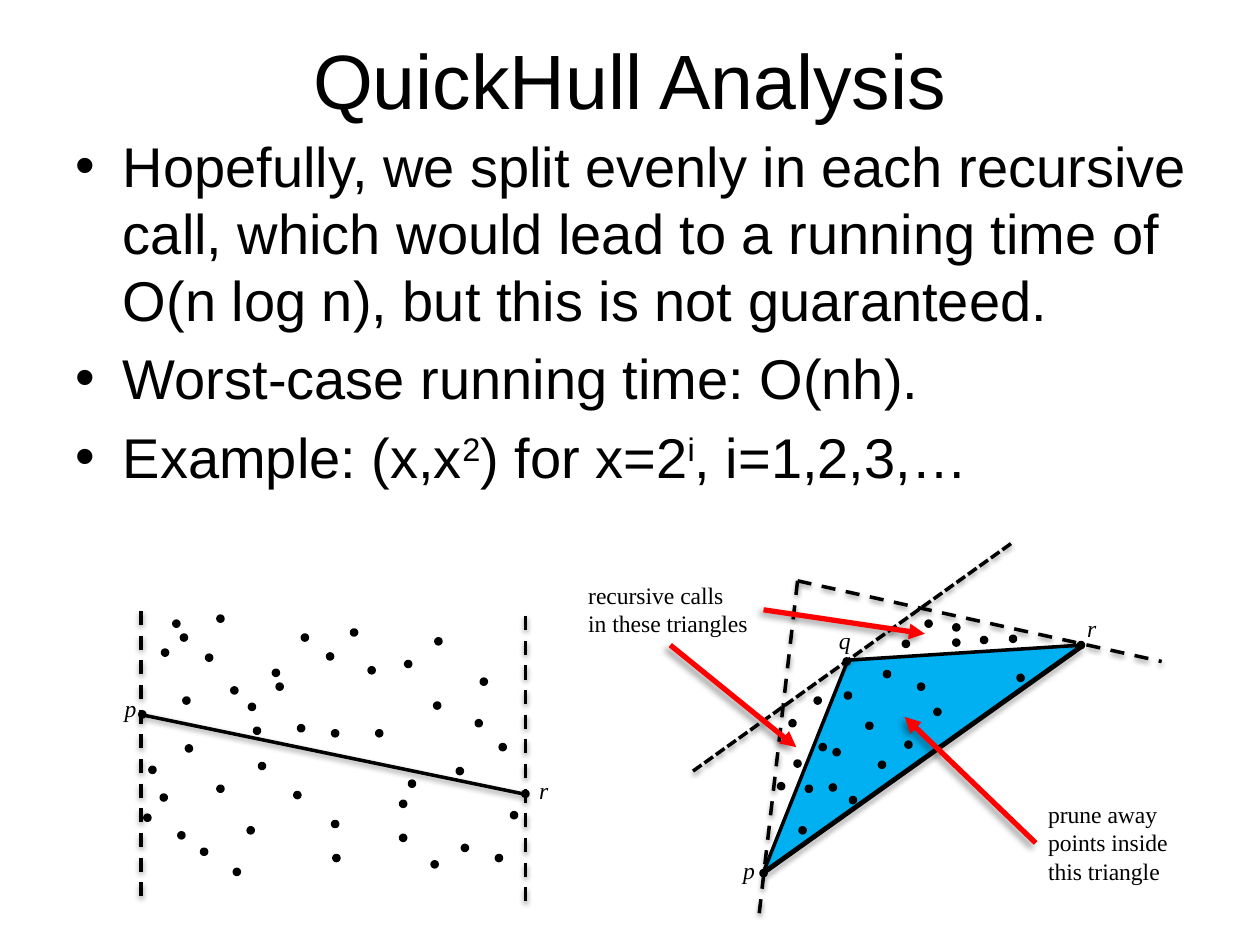
from lxml import etree
from pptx import Presentation
from pptx.dml.color import RGBColor
from pptx.enum.dml import MSO_LINE
from pptx.enum.shapes import MSO_CONNECTOR, MSO_SHAPE
from pptx.enum.text import MSO_ANCHOR, PP_ALIGN
from pptx.oxml.ns import qn
from pptx.util import Inches, Pt

OVAL = MSO_SHAPE.OVAL
STRAIGHT = MSO_CONNECTOR.STRAIGHT
DASH = MSO_LINE.DASH
SHORT_DASH = MSO_LINE.SQUARE_DOT
CENTER = PP_ALIGN.CENTER
MIDDLE = MSO_ANCHOR.MIDDLE

BLACK = RGBColor(0, 0, 0)
RED = RGBColor(0xFF, 0, 0)
BLUE = RGBColor(0, 0xB0, 0xF0)

BODY_FONT = "Arial"
LABEL_FONT = "Times New Roman"
DOT_SIZE = 0.04
# Shadows: opacity in percent, blur and distance in points, direction in degrees
LINE_SHADOW = (38, 3.1, 1.6, 90)
ARROW_SHADOW = (40, 4, 3, 135)

BULLETS = [
    [("Hopefully, we split evenly in each recursive call, which would lead to "
      "a running time of O(n log n), but this is not guaranteed.", False)],
    [("Worst-case running time: O(nh).", False)],
    [("Example: (x,x", False), ("2", True), (") for x=2", False),
     ("i", True), (", i=1,2,3,…", False)],
]

# Top left corners of the dots, in inches from the corner of their figure
SPLIT_DOTS = [
    (1.73, 0.89), (1.38, 0.93), (1.11, 1.65), (4.15, 2.28), (2.4, 1.04),
    (2.6, 1.19), (2.79, 1), (3.22, 1.25), (2.93, 1.3), (3.45, 1.58),
    (3.46, 1.07), (3.82, 1.39), (3.78, 1.72), (1.44, 1.04), (3.97, 1.91),
    (1.86, 2.9), (1.46, 1.54), (1.19, 2.09), (1.15, 2.47), (1.28, 2.31),
    (1.42, 2.61), (1.6, 2.74), (1.64, 1.2), (2.65, 2.79), (3.18, 2.63),
    (3.43, 2.84), (1.29, 1.16), (3.67, 2.71), (3.94, 2.79), (4.06, 2.45),
    (1.48, 1.92), (1.84, 1.46), (1.98, 1.59), (2.2, 1.43), (1.73, 2.24),
    (1.97, 2.57), (2.06, 2.06), (2.37, 1.76), (2.34, 2.29), (2.64, 1.8),
    (2.02, 1.78), (2.64, 2.52), (3.25, 2.2), (2.99, 1.8), (2.17, 1.32),
    (3.18, 2.36), (3.63, 2.1),
]
PRUNE_DOTS = [
    (2.04, 2.91), (4.56, 1.1), (2.47, 1.54), (2.71, 1.5), (2.7, 1.23),
    (3.17, 1.09), (3.02, 1.33), (3.57, 1.08), (3.29, 1.43), (2.88, 1.74),
    (4.02, 1.05), (3.57, 0.96), (2.35, 2.57), (2.31, 2.04), (2.18, 2.22),
    (2.4, 2.24), (2.59, 2.23), (2.62, 1.95), (2.27, 1.72), (3.35, 0.93),
    (2.98, 2.05), (3.79, 1.06), (3.19, 1.89), (2.75, 2.33), (3.42, 1.63),
    (2.51, 1.91), (4.08, 1.36),
]


def place(shape, left, top, width, height):
    shape.left, shape.top = Inches(left), Inches(top)
    shape.width, shape.height = Inches(width), Inches(height)


def add_run(paragraph, text, font_name, size, italic=None):
    run = paragraph.add_run()
    run.text = text
    font = run.font
    font.name, font.size, font.italic = font_name, Pt(size), italic
    font.color.rgb = BLACK
    return run


def add_title(slide, box):
    title = slide.shapes.title
    place(title, *box)
    title.text_frame.vertical_anchor = MIDDLE
    paragraph = title.text_frame.paragraphs[0]
    paragraph.alignment = CENTER
    add_run(paragraph, "QuickHull Analysis", BODY_FONT, 44)


def add_bullets(slide, box):
    body = slide.placeholders[1]
    place(body, *box)
    frame = body.text_frame
    for index, parts in enumerate(BULLETS):
        paragraph = frame.add_paragraph() if index else frame.paragraphs[0]
        for text, raised in parts:
            run = add_run(paragraph, text, BODY_FONT, 32)
            if raised:
                run.font._element.set("baseline", "30000")


def add_dots(slide, origin, dots):
    for x, y in dots:
        dot = slide.shapes.add_shape(OVAL, 0, 0, 0, 0)
        place(dot, origin[0] + x, origin[1] + y, DOT_SIZE, DOT_SIZE)
        dot.shadow.inherit = False
        dot.fill.solid()
        dot.fill.fore_color.rgb = BLACK
        dot.line.color.rgb = BLACK
        dot.line.width = Pt(2)


def add_label(slide, origin, box, lines, italic=False):
    x, y, width, height = box
    label = slide.shapes.add_textbox(0, 0, 0, 0)
    place(label, origin[0] + x, origin[1] + y, width, height)
    frame = label.text_frame
    frame.word_wrap = False
    for index, text in enumerate(lines):
        paragraph = frame.add_paragraph() if index else frame.paragraphs[0]
        add_run(paragraph, text, LABEL_FONT, 13.5, italic)


def add_shadow(connector, opacity, blur, distance, direction):
    effects = etree.SubElement(connector._element.spPr, qn("a:effectLst"))
    shadow = etree.SubElement(
        effects, qn("a:outerShdw"), blurRad=str(Pt(blur)),
        dist=str(Pt(distance)), dir=str(direction * 60000), rotWithShape="0")
    color = etree.SubElement(shadow, qn("a:srgbClr"), val=str(BLACK))
    etree.SubElement(color, qn("a:alpha"), val=str(opacity * 1000))


def add_line(slide, origin, start, end, dash=None, color=BLACK, width=2,
             shadow=LINE_SHADOW):
    ends = [Inches(base + offset) for point in (start, end)
            for base, offset in zip(origin, point)]
    connector = slide.shapes.add_connector(STRAIGHT, *ends)
    connector.line.color.rgb = color
    connector.line.width = Pt(width)
    if dash:
        connector.line.dash_style = dash
    add_shadow(connector, *shadow)
    return connector


def add_arrow(slide, origin, start, end):
    arrow = add_line(slide, origin, start, end, None, RED, 3, ARROW_SHADOW)
    etree.SubElement(arrow.line._get_or_add_ln(), qn("a:tailEnd"),
                     type="triangle")


def add_triangle(slide, origin, corners):
    points = [(Inches(origin[0] + x), Inches(origin[1] + y))
              for x, y in corners]
    builder = slide.shapes.build_freeform(*points[0])
    builder.add_line_segments(points[1:], close=True)
    triangle = builder.convert_to_shape()
    triangle.shadow.inherit = False
    triangle.fill.solid()
    triangle.fill.fore_color.rgb = BLUE
    triangle.line.color.rgb = BLACK
    triangle.line.width = Pt(2)


def add_split_figure(slide, origin):
    """Point set divided by the line from p to r."""
    add_dots(slide, origin, SPLIT_DOTS)
    add_label(slide, origin, (0.89, 1.46, 0.3, 0.33), ["p"], True)
    add_label(slide, origin, (4.18, 2.11, 0.28, 0.33), ["r"], True)
    add_line(slide, origin, (1.11, 1.67), (4.15, 2.3))
    for x, top in ((4.17, 0.89), (1.12, 0.85)):
        add_line(slide, origin, (x, top), (x, top + 2.34), DASH)


def add_prune_figure(slide, origin):
    """Triangle pqr whose inner points are dropped."""
    add_triangle(slide, origin, [(2.06, 2.92), (2.73, 1.24), (4.59, 1.12)])
    add_dots(slide, origin, PRUNE_DOTS)
    add_line(slide, origin, (2.05, 2.94), (4.58, 1.14))
    apex = (2.33, 0.61)
    for end in ((5.22, 1.25), (2.02, 3.3)):
        add_line(slide, origin, apex, end, DASH)
    add_line(slide, origin, (1.5, 2.12), (4.03, 0.31), SHORT_DASH)
    add_label(slide, origin, (2.56, 0.92, 0.3, 0.33), ["q"], True)
    add_label(slide, origin, (1.8, 2.74, 0.3, 0.33), ["p"], True)
    add_label(slide, origin, (4.53, 0.82, 0.28, 0.33), ["r"], True)
    add_label(slide, origin, (4.22, 2.3, 1.16, 0.78),
              ["prune away", "points inside", "this triangle"])
    add_label(slide, origin, (0.57, 0.56, 1.49, 0.56),
              ["recursive calls", "in these triangles"])
    for start, end in (((4.22, 2.69), (3.18, 1.69)),
                       ((2.06, 0.84), (3.34, 1.03)),
                       ((1.32, 1.12), (2.32, 1.93))):
        add_arrow(slide, origin, start, end)


def main():
    presentation = Presentation()
    presentation.slide_width = Inches(10)
    presentation.slide_height = Inches(7.5)
    slide = presentation.slides.add_slide(presentation.slide_layouts[1])
    add_title(slide, (0.5, 0, 9, 1.25))
    add_bullets(slide, (0.5, 0.99, 9.18, 3.6))
    add_split_figure(slide, (0, 4))
    add_prune_figure(slide, (4, 4))
    presentation.save("out.pptx")


if __name__ == "__main__":
    main()
